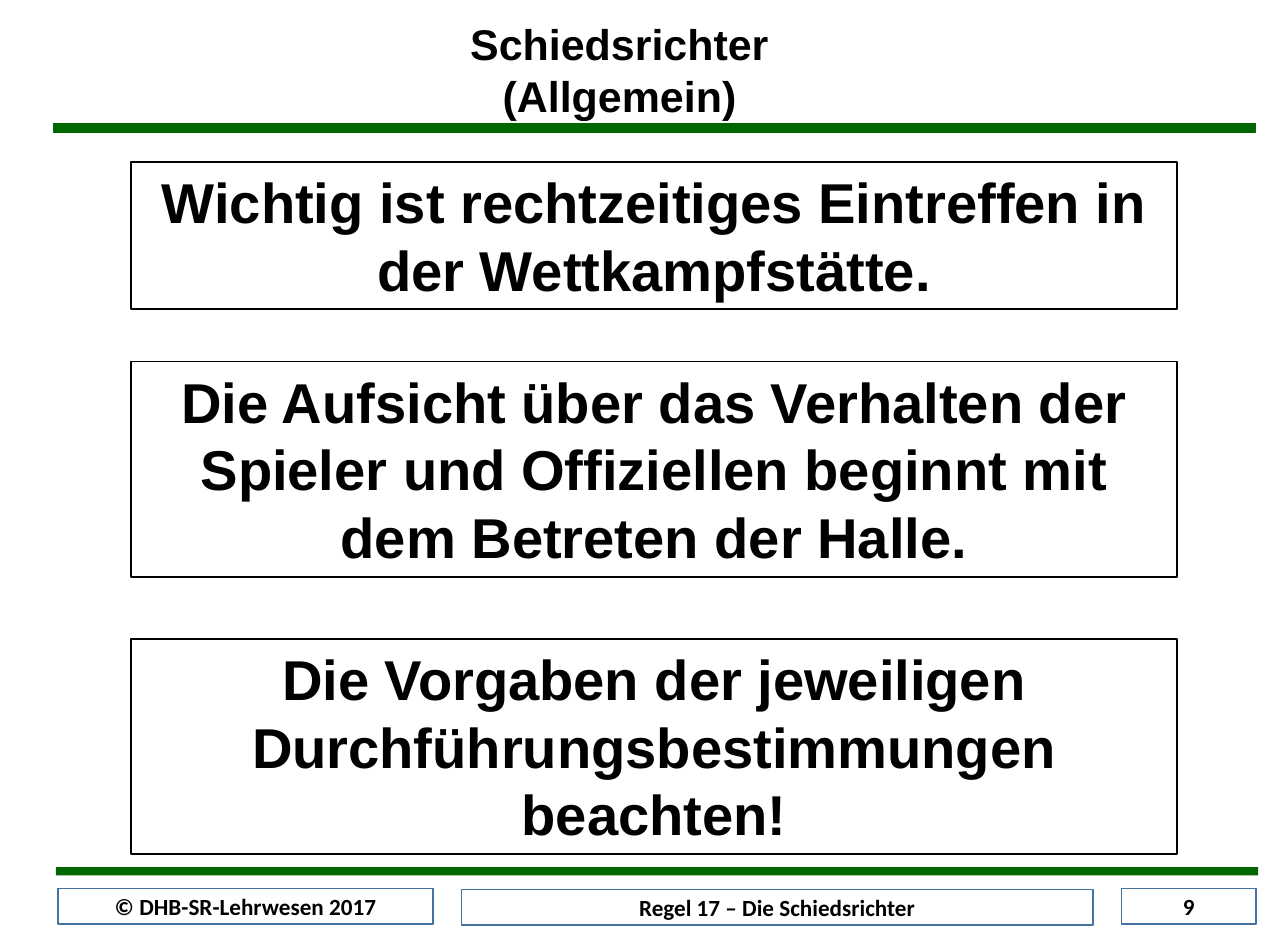
from dataclasses import dataclass

from pptx import Presentation
from pptx import util as u
from pptx.dml.color import RGBColor
from pptx.enum import shapes, text

GREEN = "006600"
BLUE = "43739E"
BLACK = "000000"
WHITE = "FFFFFF"


@dataclass
class Box:
    left: float
    top: float
    width: float
    height: float
    words: str = ""


BARS = [Box(0.45, 1.04, 10.11, 0.07), Box(0.47, 7.29, 10.11, 0.07)]
FOOTERS = [
    Box(0.49, 7.47, 3.15, 0.3, "© DHB-SR-Lehrwesen 2017"),
    Box(3.88, 7.48, 5.31, 0.3, "Regel 17 – Die Schiedsrichter"),
    Box(9.43, 7.47, 1.13, 0.3, "9"),
]
STATEMENTS = [
    Box(1.1, 1.36, 8.8, 1.24,
        "Wichtig ist rechtzeitiges Eintreffen in der Wettkampfstätte."),
    Box(1.1, 3.04, 8.8, 1.81,
        "Die Aufsicht über das Verhalten der Spieler und Offiziellen "
        "beginnt mit dem Betreten der Halle."),
    Box(1.1, 5.37, 8.8, 1.81,
        "Die Vorgaben der jeweiligen Durchführungsbestimmungen beachten!"),
]
TITLE = Box(3.84, 0.1, 2.74, 0.98, "Schiedsrichter (Allgemein)")


def color(value: str) -> RGBColor:
    return RGBColor.from_string(value)


def add_rectangle(slide, box: Box, fill: str, line: str, line_width: float):
    shape = slide.shapes.add_shape(
        shapes.MSO_SHAPE.RECTANGLE, u.Inches(box.left), u.Inches(box.top),
        u.Inches(box.width), u.Inches(box.height))
    shape.shadow.inherit = False
    shape.fill.solid()
    shape.fill.fore_color.rgb = color(fill)
    if line_width:
        shape.line.color.rgb = color(line)
        shape.line.width = u.Pt(line_width)
    else:
        shape.line.fill.background()
    return shape


def write(shape, words: str, font: str, size: float, anchor) -> None:
    frame = shape.text_frame
    frame.word_wrap = True
    frame.auto_size = text.MSO_AUTO_SIZE.NONE
    frame.vertical_anchor = anchor
    frame.margin_left = frame.margin_right = u.Inches(0.11)
    frame.margin_top = frame.margin_bottom = u.Inches(0.05)
    paragraph = frame.paragraphs[0]
    paragraph.alignment = text.PP_ALIGN.CENTER
    paragraph.line_spacing = 1.0
    run = paragraph.add_run()
    run.text = words
    run.font.name = font
    run.font.size = u.Pt(size)
    run.font.bold = True
    run.font.color.rgb = color(BLACK)


def place_title(slide, box: Box) -> None:
    title = slide.shapes.title
    title.left, title.top = u.Inches(box.left), u.Inches(box.top)
    title.width, title.height = u.Inches(box.width), u.Inches(box.height)
    write(title, box.words, "Arial", 26, text.MSO_ANCHOR.TOP)


def main() -> None:
    presentation = Presentation()
    presentation.slide_width = u.Inches(10.83)
    presentation.slide_height = u.Inches(7.92)
    slide = presentation.slides.add_slide(presentation.slide_layouts[5])
    slide.background.fill.solid()
    slide.background.fill.fore_color.rgb = color(WHITE)
    for bar, line_width in zip(BARS, (0.75, 0)):
        add_rectangle(slide, bar, GREEN, GREEN, line_width)
    for footer in FOOTERS:
        shape = add_rectangle(slide, footer, WHITE, BLUE, 1)
        write(shape, footer.words, "Calibri", 14, text.MSO_ANCHOR.MIDDLE)
    for statement in STATEMENTS:
        shape = add_rectangle(slide, statement, WHITE, BLACK, 1)
        write(shape, statement.words, "Arial", 34, text.MSO_ANCHOR.TOP)
    place_title(slide, TITLE)
    presentation.save("out.pptx")


if __name__ == "__main__":
    main()
